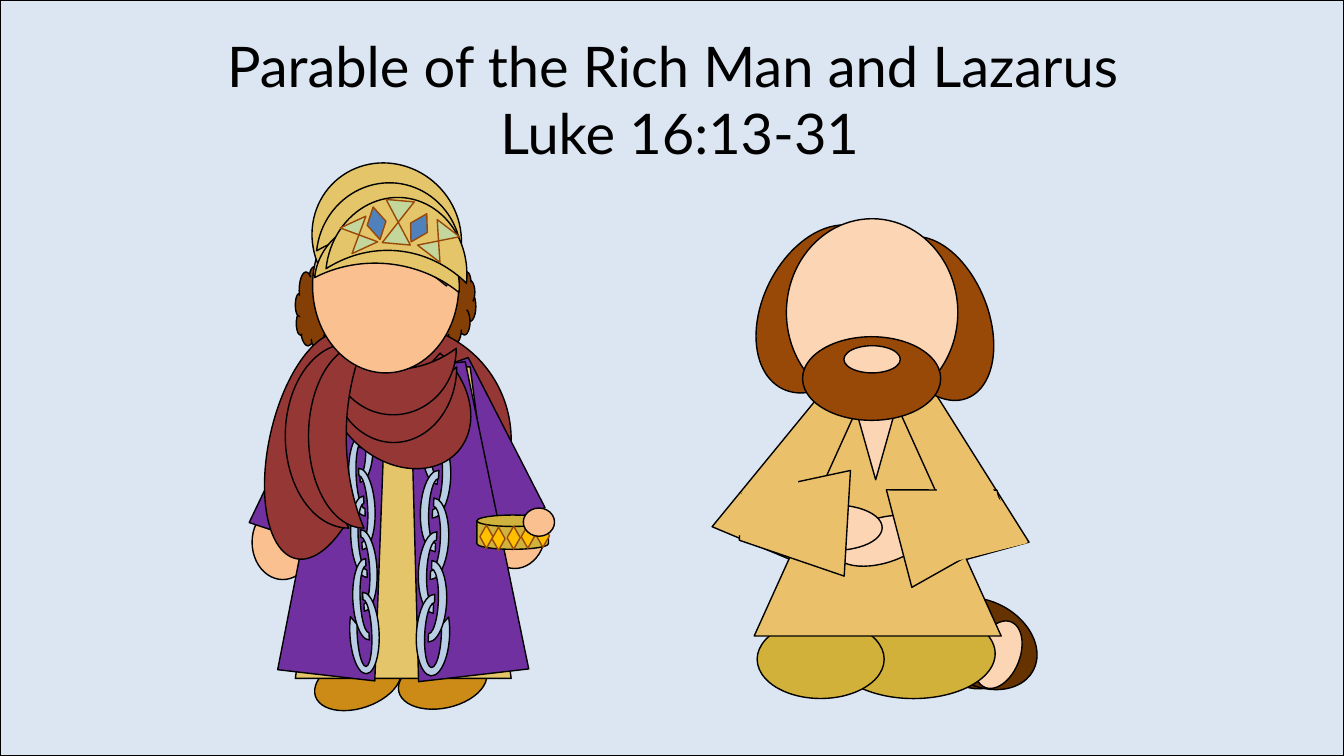
import dataclasses

import pptx
import pptx.dml.color
import pptx.enum.shapes
import pptx.enum.text
import pptx.util

Inches = pptx.util.Inches
SHAPE = pptx.enum.shapes.MSO_SHAPE
TITLE_ONLY = 5

BLACK, BROWN, PALE_BLUE = "000000", "984807", "DCE6F2"
TAN, PURPLE, MAROON, GOLD = "FAC090", "7030A0", "953735", "E5C569"
SKIN, CLOTH, OLIVE, DARK_BROWN = "FCD5B5", "EBC06B", "D2B13A", "663300"


def colour(hex_value):
    return pptx.dml.color.RGBColor.from_string(hex_value)


@dataclasses.dataclass
class Figure:
    """A group of shapes placed relative to its left and top, in inches."""
    group: object
    left: float
    top: float

    def add(self, kind, at, fill, rotation=0, adjust=(), line=BLACK, flip=False):
        left, top, width, height = at
        shape = self.group.shapes.add_shape(
            kind, Inches(self.left + left), Inches(self.top + top),
            Inches(width), Inches(height))
        shape.shadow.inherit = False
        shape.rotation = rotation
        for index, value in enumerate(adjust):
            shape.adjustments[index] = value
        if flip:
            shape._element.spPr.xfrm.set("flipH", "1")
        shape.fill.solid()
        shape.fill.fore_color.rgb = colour(fill)
        if line:
            shape.line.color.rgb = colour(line)
            shape.line.width = pptx.util.Pt(1)
        else:
            shape.line.fill.background()

    def add_all(self, kind, fill, parts, **style):
        """Add parts of one kind, each a place and a rotation."""
        for at, rotation in parts:
            self.add(kind, at, fill, rotation, **style)


def add_background(slide, width, height):
    Figure(slide, 0, 0).add(SHAPE.RECTANGLE, (0, 0, width, height), PALE_BLUE)


def add_title(slide, left, top, width, height, lines):
    title = slide.shapes.title
    title.left, title.top = Inches(left), Inches(top)
    title.width, title.height = Inches(width), Inches(height)
    slide.shapes._spTree.append(title._element)
    frame = title.text_frame
    frame.word_wrap = True
    frame.auto_size = pptx.enum.text.MSO_AUTO_SIZE.NONE
    for index, line in enumerate(lines):
        para = frame.add_paragraph() if index else frame.paragraphs[0]
        para.alignment = pptx.enum.text.PP_ALIGN.CENTER
        span = para.add_run()
        span.text = line
        span.font.name = "Lato"
        span.font.size = pptx.util.Pt(40)
        span.font.color.rgb = colour(BLACK)


def add_chain(figure, left, height, side):
    """Side is 1 for the chain that drifts right and -1 for its mirror."""
    length, gap = 0.81, 0.335
    pair_tops = (2.5, 3.17, 3.78, 4.4)
    for index, top in enumerate(pair_tops):
        first, last = index == 0, index == len(pair_tops) - 1
        x = left + side * 0.02 * index
        links = [
            (x, top, 180 - side * 92.6 + 180, (24.17, 0, 0.25) if first else ()),
            (x - side * 0.03, top + gap, 180 - side * 92.6,
             (22.95, 0, 0.25) if last else ()),
        ]
        for x, y, rotation, adjust in reversed(links) if last else links:
            figure.add(SHAPE.BLOCK_ARC, (x, y, length, height), "B9CDE5",
                       rotation % 360, adjust, flip=side == 1)


def add_rich_body(figure):
    figure.add_all(SHAPE.CLOUD, "843F06", [
        ((0.53, 1.22, 0.43, 0.86), 0), ((1.89, 1.29, 0.43, 0.72), 0)])
    figure.add_all(SHAPE.OVAL, "CC8B16", [
        ((1.73, 4.92, 0.52, 0.89), 77.7), ((0.89, 4.92, 0.52, 0.89), 71.2)])
    figure.add_all(SHAPE.OVAL, TAN, [
        ((0.1, 3.61, 0.61, 0.74), 0), ((2.4, 3.5, 0.61, 0.74), 0)])
    figure.add(SHAPE.OVAL, (0.36, 1.81, 2.31, 2.3), MAROON)
    figure.add_all(SHAPE.TRAPEZOID, PURPLE, [
        ((1.9, 2.17, 0.85, 1.66), 340.2), ((0.31, 2.3, 0.85, 1.66), 18.3)])
    figure.add(SHAPE.TRAPEZOID, (0.53, 2.24, 2.14, 3.09), GOLD, adjust=[0.19])
    figure.add(SHAPE.TRAPEZOID, (1.57, 2.21, 1.1, 3.1), PURPLE, 353.4)
    add_chain(figure, 1.52, 0.33, -1)
    figure.add(SHAPE.TRAPEZOID, (0.53, 2.19, 0.97, 3.12), PURPLE, 6.6)
    add_chain(figure, 0.78, 0.29, 1)


def add_scarf(figure):
    figure.add(SHAPE.TRAPEZOID, (1.18, 2.24, 0.68, 0.22), TAN, 180)
    figure.add(SHAPE.PIE, (0.95, 1.78, 1.22, 1.56), MAROON, 311.6)
    figure.add_all(SHAPE.MOON, MAROON, [
        ((1.13, 1.99, 0.75, 1.25), 270), ((1.17, 1.76, 0.66, 1.25), 270)],
        adjust=[0.68])
    figure.add(SHAPE.PIE, (0.27, 1.87, 1.03, 2.3), MAROON, 12.5, [30.58, 162])
    figure.add_all(SHAPE.MOON, MAROON, [
        ((0.43, 2.01, 0.63, 1.83), 0), ((0.66, 2.01, 0.55, 1.83), 0)],
        adjust=[0.68])


def add_turban(figure):
    figure.add(SHAPE.OVAL, (0.7, 0.57, 1.45, 1.73), TAN)
    figure.add(SHAPE.PIE, (0.71, 0.2, 1.45, 1.52), GOLD, 137.5, [11.73, 156.8])
    figure.add_all(SHAPE.MOON, GOLD, [
        ((1.12, 0.07, 0.75, 1.44), 95.9), ((1.14, 0.38, 0.66, 1.44), 95.9),
        ((1.18, 0.25, 0.78, 1.4), 95.9)], adjust=[0.68])
    figure.add_all(SHAPE.FLOWCHART_COLLATE, "C3D69B", [
        ((1.02, 0.79, 0.28, 0.28), 335.3), ((1.81, 0.83, 0.28, 0.32), 37.5),
        ((1.41, 0.59, 0.28, 0.43), 5.1)], line=BROWN)
    figure.add_all(SHAPE.DIAMOND, "4F81BD", [
        ((1.24, 0.65, 0.19, 0.33), 348.1), ((1.66, 0.7, 0.19, 0.32), 29.2)],
        line=BROWN)


def add_bowl(figure):
    figure.add(SHAPE.FLOWCHART_MAGNETIC_DISK, (2.33, 3.71, 0.71, 0.34), "CFB33D")
    corners = [(2.36, 3.81), (2.48, 3.83), (2.63, 3.82), (2.77, 3.81), (2.92, 3.8)]
    figure.add_all(SHAPE.DIAMOND, "FFC000",
                   [((x, y, 0.13, 0.23), 0) for x, y in corners], line=BROWN)
    figure.add(SHAPE.OVAL, (2.79, 3.64, 0.31, 0.28), TAN)


def add_rich_man(slide, left, top):
    figure = Figure(slide.shapes.add_group_shape(), left, top)
    for add_part in (add_rich_body, add_scarf, add_turban, add_bowl):
        add_part(figure)


def add_lazarus(slide, left, top):
    figure = Figure(slide.shapes.add_group_shape(), left, top)
    # Foot, arms and knees
    figure.add_all(SHAPE.OVAL, DARK_BROWN, [
        ((2.09, 3.9, 0.84, 0.83), 298.2), ((2.13, 3.72, 0.84, 1.13), 298.2)])
    figure.add(SHAPE.OVAL, (2.35, 4.18, 0.7, 0.43), SKIN, 291.5)
    figure.add_all(SHAPE.TRAPEZOID, CLOTH, [
        ((0.15, 1.7, 1.57, 1.8), 22.8), ((1.15, 1.68, 1.64, 1.85), 344.6)],
        adjust=[0.34])
    figure.add_all(SHAPE.OVAL, OLIVE, [
        ((1.05, 3.94, 1.62, 0.89), 0), ((0.31, 4.05, 1.26, 0.78), 0)])
    # Robe, hair, hands and face
    figure.add(SHAPE.ISOSCELES_TRIANGLE, (0.28, 1.5, 2.45, 2.71), CLOTH)
    figure.add_all(SHAPE.OVAL, BROWN, [
        ((1.23, 0.54, 1.7, 1.04), 68.3), ((0.07, 0.38, 1.77, 1.17), 116.7)])
    figure.add_all(SHAPE.OVAL, SKIN, [
        ((1.07, 3.04, 0.94, 0.45), 343.8), ((0.61, 2.91, 0.94, 0.45), 0)])
    figure.add(SHAPE.ISOSCELES_TRIANGLE, (1.11, 1.33, 0.75, 1.33), SKIN, 180)
    figure.add(SHAPE.OVAL, (0.6, 0.07, 1.7, 1.86), SKIN)
    # Sleeves, with plain patches over their seams
    figure.add_all(SHAPE.TRAPEZOID, CLOTH, [
        ((0.15, 2.53, 1.05, 1.06), 273.4), ((1.73, 2.58, 1, 1.06), 75.4)],
        adjust=[0.28])
    figure.add_all(SHAPE.TRAPEZOID, CLOTH, [
        ((0.05, 2.38, 0.79, 0.92), 22.8), ((1.92, 2.62, 0.99, 0.8), 345.9)],
        adjust=[0.34], line=None)
    # Beard and mouth
    figure.add(SHAPE.OVAL, (0.76, 1.24, 1.37, 0.83), BROWN, 180)
    figure.add(SHAPE.OVAL, (1.17, 1.33, 0.56, 0.27), SKIN)


def main():
    deck = pptx.Presentation()
    deck.slide_width, deck.slide_height = Inches(13.33), Inches(7.5)
    slide = deck.slides.add_slide(deck.slide_layouts[TITLE_ONLY])
    add_background(slide, 13.33, 7.5)
    add_rich_man(slide, 2.4, 1.4)
    add_title(slide, 1.67, 0.25, 10, 1.45,
              ["Parable of the Rich Man and Lazarus", " Luke 16:13-31"])
    add_lazarus(slide, 7.2, 2.1)
    deck.save("out.pptx")


if __name__ == "__main__":
    main()
